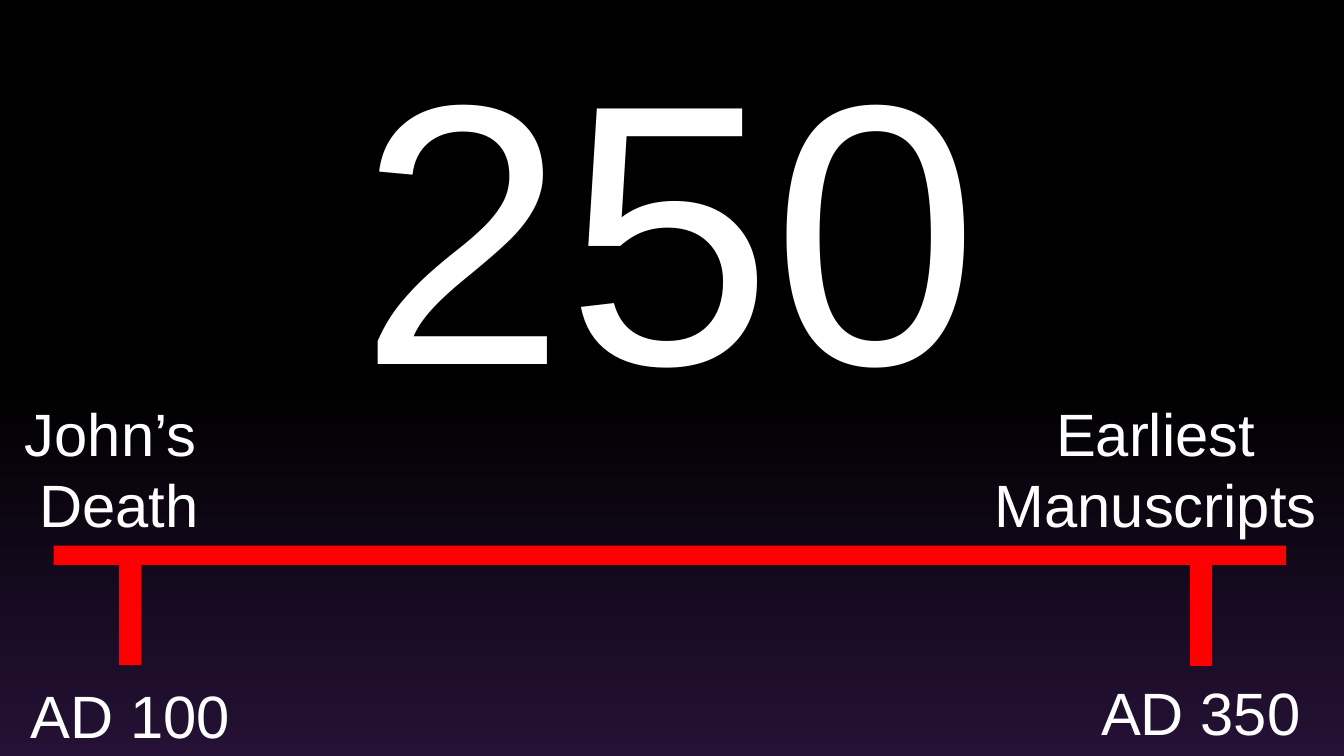
"""Build a timeline slide showing the 250 years between two dates."""
import copy

import pptx
import pptx.dml.color
import pptx.enum.shapes
import pptx.enum.text
import pptx.oxml.ns
import pptx.util

PX = 4572
WHITE, RED = "FFFFFF", "FF0000"


def color(hex_string):
    return pptx.dml.color.RGBColor.from_string(hex_string)


def write(holder, box, text, size):
    holder.left, holder.top, holder.width, holder.height = [n * PX for n in box]
    frame = holder.text_frame
    frame.text = text
    frame.word_wrap = True
    frame.auto_size = pptx.enum.text.MSO_AUTO_SIZE.NONE
    frame.vertical_anchor = pptx.enum.text.MSO_ANCHOR.TOP
    for paragraph in frame.paragraphs:
        paragraph.alignment = pptx.enum.text.PP_ALIGN.CENTER
        paragraph.font.name = "Arial"
        paragraph.font.size = pptx.util.Pt(size)
        paragraph.font.color.rgb = color(WHITE)


presentation = pptx.Presentation()
presentation.slide_width = 2000 * PX
presentation.slide_height = 1125 * PX
slide = presentation.slides.add_slide(presentation.slide_layouts[5])

backdrop = slide.background.fill
backdrop.gradient()
backdrop.gradient_angle = 270
first_stop = slide.element.find(".//" + pptx.oxml.ns.qn("a:gs"))
first_stop.addnext(copy.deepcopy(first_stop))
shades = [(0, "000000"), (0.5, "000000"), (1, "251135")]
for stop, (position, shade) in zip(backdrop.gradient_stops, shades):
    stop.position = position
    stop.color.rgb = color(shade)

write(slide.shapes.title, (38, -20, 1916, 690), "250", 199)

labels = [
    ((-6, 580, 366, 236), "John’s \nDeath"),
    ((1406, 580, 628, 236), "Earliest Manuscripts"),
    ((0, 1000, 388, 128), "AD 100"),
    ((1574, 996, 426, 128), "AD 350"),
]
for box, text in labels:
    write(slide.shapes.add_textbox(0, 0, 0, 0), box, text, 32)

timeline = (80, 812, 1834, 29)
start_tick = (177, 836, 33, 154)
end_tick = (1771, 813, 33, 178)
for box in (timeline, start_tick, end_tick):
    bar = slide.shapes.add_shape(
        pptx.enum.shapes.MSO_SHAPE.RECTANGLE, *[n * PX for n in box])
    bar.shadow.inherit = False
    bar.fill.solid()
    bar.fill.fore_color.rgb = color(RED)
    bar.line.fill.background()

presentation.save("out.pptx")
